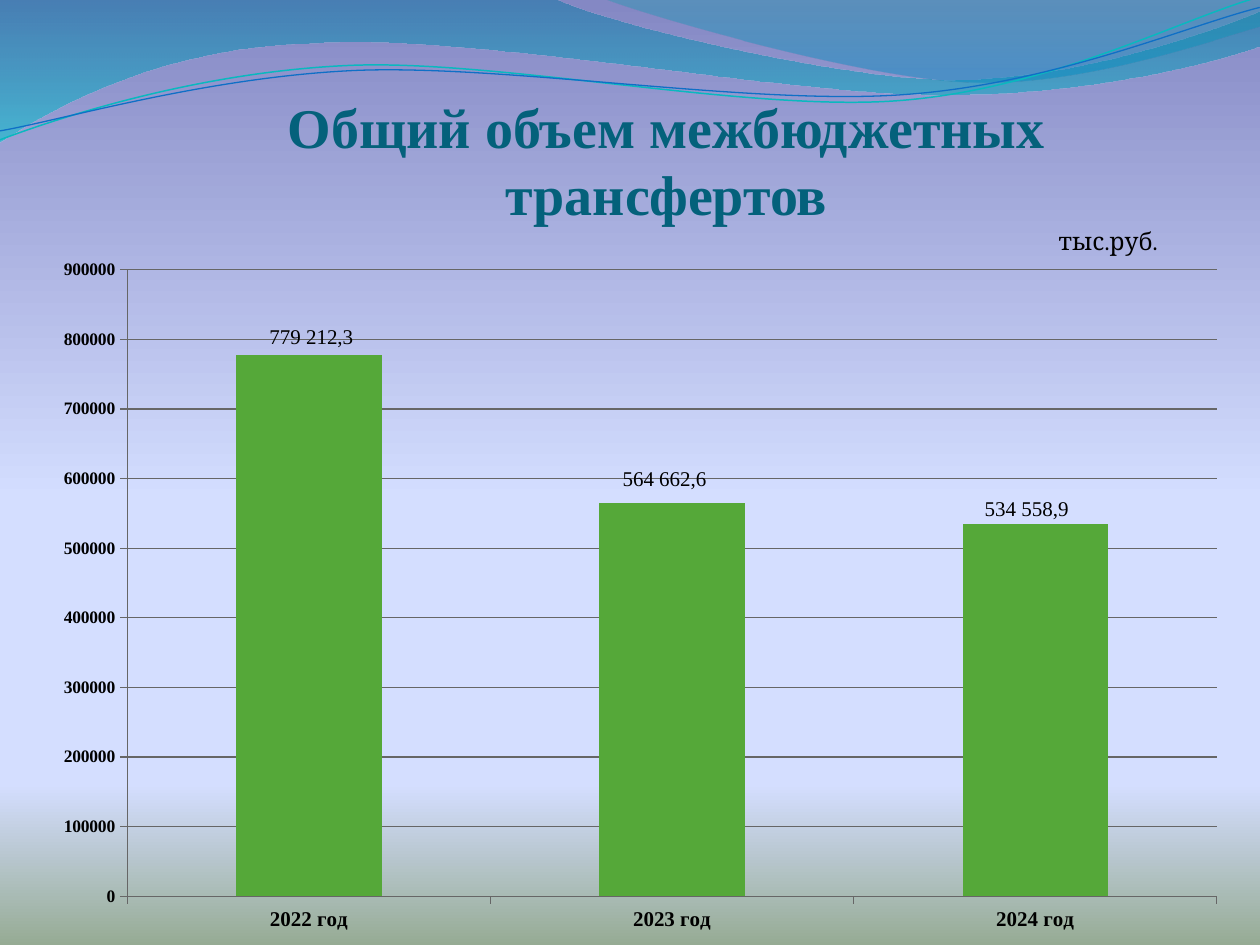
import math

from lxml import etree
from pptx import Presentation
from pptx import util as u
from pptx.chart.data import CategoryChartData
from pptx.dml.color import RGBColor
from pptx.enum import chart as charts, text
from pptx.oxml import parse_xml
from pptx.oxml.ns import nsdecls, qn

COLOURS = {
    "title": "04617B", "text": "000000", "bar": "55A839", "grid": "666666",
    "teal_line": "0AB8BF", "blue_line": "0F6FC6",
}
SERIF = "Times New Roman"

# Gradient stops: position, colour, opacity (positions and opacity in percent)
BACKGROUND = [(0, "8488C4", 100), (53, "D4DEFF", 100),
              (83, "D4DEFF", 100), (100, "96AB94", 100)]
LEFT_WAVE = [(0, "0074A1", 45), (100, "00C6CF", 55)]
RIGHT_WAVE = [(0, "00A1A9", 30), (80, "008BBF", 45)]

# Outlines in cm: two numbers are a straight line, six a Bezier curve
LEFT_WAVE_PATH = [
    (0, 0), (11.18, -0.03), (12.09, 0.43, 16.87, 1.6, 19.25, 1.6),
    (21.67, 1.6, 24.33, 0.66, 25.4, 0.23), (25.43, 0.91),
    (24.97, 1.12, 22.1, 1.93, 18.95, 1.91),
    (15.8, 1.91, 9.7, 0.71, 6.53, 0.86),
    (3.28, 0.91, 1.17, 2.11, -0.03, 2.87)]
RIGHT_WAVE_PATH = [
    (12.17, -0.03), (12.93, 0.28, 17.32, 1.57, 19.53, 1.65),
    (21.74, 1.75, 24.41, 0.81, 25.4, 0.53), (25.4, 0)]
TEAL_LINE_PATH = [
    (0, 2.82), (1.22, 2.36, 4.01, 1.45, 7.04, 1.32),
    (10.03, 1.19, 15.06, 2.26, 18.11, 2.03),
    (21.16, 1.8, 23.83, 0.38, 25.35, -0.05)]
BLUE_LINE_PATH = [
    (0, 2.64), (1.19, 2.44, 4.17, 1.55, 7.19, 1.42),
    (10.24, 1.3, 15.16, 2.13, 18.21, 1.91),
    (21.23, 1.7, 23.9, 0.53, 25.4, 0.15)]
LINE_TILT = -2.7

YEARS = ["2022 год", "2023 год", "2024 год"]
VALUES = [778212, 564663, 534559]
# Label text and its shift in cm
LABELS = [("779 212,3", 0.05, -0.02), ("564 662,6", -0.15, -0.16),
          ("534 558,9", -0.17, 0.02)]


def colour(name):
    return RGBColor.from_string(COLOURS[name])


def set_gradient(fill, parent, stops):
    """Fill from top to bottom."""
    marks = "".join(
        f'<a:gs pos="{position * 1000}"><a:srgbClr val="{value}">'
        f'<a:alpha val="{opacity * 1000}"/></a:srgbClr></a:gs>'
        for position, value, opacity in stops)
    fill.solid()
    solid = parent.find(".//" + qn("a:solidFill"))
    solid.getparent().replace(solid, parse_xml(
        f'<a:gradFill {nsdecls("a")} rotWithShape="1"><a:gsLst>{marks}'
        '</a:gsLst><a:lin ang="5400000" scaled="0"/></a:gradFill>'))


def rotate(point, centre, degrees):
    angle = math.radians(degrees)
    x, y = point[0] - centre[0], point[1] - centre[1]
    return (centre[0] + x * math.cos(angle) - y * math.sin(angle),
            centre[1] + x * math.sin(angle) + y * math.cos(angle))


def add_outline(slide, path_steps, close, tilt=0):
    points = [pair for step in path_steps for pair in zip(step[::2], step[1::2])]
    centre = [(points[0][axis] + points[-1][axis]) / 2 for axis in (0, 1)]
    points = [tuple(map(u.Cm, rotate(point, centre, -tilt))) for point in points]
    builder = slide.shapes.build_freeform(*points[0])
    builder.add_line_segments(points[1:], close=close)
    shape = builder.convert_to_shape()
    shape.rotation = tilt
    shape.shadow.inherit = False

    # Join three segments into one curve wherever the step is a Bezier
    segments = iter(list(shape.element.iter(qn("a:lnTo"))))
    for step in path_steps[1:]:
        first = next(segments)
        if len(step) == 6:
            first.tag = qn("a:cubicBezTo")
            for _ in range(2):
                extra = next(segments)
                first.append(extra[0])
                extra.getparent().remove(extra)
    return shape


def add_wave(slide, path_steps, stops):
    shape = add_outline(slide, path_steps, True)
    shape.line.fill.background()
    set_gradient(shape.fill, shape.element.spPr, stops)


def add_curve(slide, path_steps, name, width):
    shape = add_outline(slide, path_steps, False, LINE_TILT)
    shape.fill.background()
    shape.line.color.rgb = colour(name)
    shape.line.width = u.Pt(width)


def set_font(font, size, bold=False, name=SERIF, shade="text"):
    font.name, font.size, font.bold = name, u.Pt(size), bold
    font.color.rgb = colour(shade)


def add_text(slide, box, words, anchor, margins, **font):
    shape = slide.shapes.add_textbox(*map(u.Cm, box))
    frame = shape.text_frame
    frame.word_wrap = True
    frame.vertical_anchor = anchor
    (frame.margin_left, frame.margin_top,
     frame.margin_right, frame.margin_bottom) = map(u.Cm, margins)
    frame.text = words
    paragraph = frame.paragraphs[0]
    paragraph.alignment = text.PP_ALIGN.CENTER
    set_font(paragraph.runs[0].font, **font)


def manual_layout(**settings):
    layout = parse_xml(f'<c:layout {nsdecls("c")}><c:manualLayout/></c:layout>')
    for key, value in settings.items():
        etree.SubElement(layout[0], qn("c:" + key)).set("val", str(value))
    return layout


def style_axis(axis, size):
    set_font(axis.tick_labels.font, size, True)
    axis.major_tick_mark = charts.XL_TICK_MARK.OUTSIDE
    axis.format.line.color.rgb = colour("grid")


def add_column_chart(slide, box):
    width, height = box[2:]
    data = CategoryChartData()
    data.categories = YEARS
    data.add_series("Series 1", VALUES)
    chart = slide.shapes.add_chart(
        charts.XL_CHART_TYPE.COLUMN_CLUSTERED, *map(u.Cm, box), data).chart
    chart.has_legend = chart.has_title = False
    set_font(chart.font, 10, name="Cambria")

    # Axes and grid
    style_axis(chart.category_axis, 12)
    value_axis = chart.value_axis
    style_axis(value_axis, 10)
    value_axis.minimum_scale, value_axis.maximum_scale = 0, 900000
    value_axis.major_unit = 100000
    value_axis.has_major_gridlines = True
    value_axis.major_gridlines.format.line.color.rgb = colour("grid")

    # Columns and their labels
    plot = chart.plots[0]
    plot.gap_width, plot.vary_by_categories = 150, False
    series = plot.series[0]
    series.format.fill.solid()
    series.format.fill.fore_color.rgb = colour("bar")
    series.data_labels.show_value = True
    set_font(series.data_labels.font, 12, True)
    for index, (words, _, _) in enumerate(LABELS):
        label = series.points[index].data_label
        label.text_frame.text = words
        set_font(label.text_frame.paragraphs[0].runs[0].font, 12)
        label.position = charts.XL_LABEL_POSITION.OUTSIDE_END
    marks = list(chart.element.iter(qn("c:dLbl")))
    for mark, (_, x, y) in zip(marks, LABELS):
        mark.insert(1, manual_layout(x=x / width, y=y / height))

    # Fixed plot area
    plot_area = chart.element.find(".//" + qn("c:plotArea"))
    for old in plot_area.findall(qn("c:layout")):
        plot_area.remove(old)
    plot_area.insert(0, manual_layout(
        layoutTarget="inner", xMode="edge", yMode="edge",
        x=1.78 / width, y=0.49 / height, w=21.96 / width, h=12.63 / height))


def main():
    presentation = Presentation()
    presentation.slide_width, presentation.slide_height = u.Cm(25.4), u.Cm(19.05)
    slide = presentation.slides.add_slide(presentation.slide_layouts[6])

    # Background and waves
    set_gradient(slide.background.fill, slide.element.cSld, BACKGROUND)
    add_wave(slide, LEFT_WAVE_PATH, LEFT_WAVE)
    add_wave(slide, RIGHT_WAVE_PATH, RIGHT_WAVE)
    add_curve(slide, TEAL_LINE_PATH, "teal_line", 0.85)
    add_curve(slide, BLUE_LINE_PATH, "blue_line", 0.75)

    # Title, unit and chart
    add_text(slide, (2.59, 1.4, 21.69, 3.17), "Общий объем межбюджетных трансфертов",
             text.MSO_ANCHOR.BOTTOM, (0, 0.13, 0, 0), size=32, bold=True, shade="title")
    add_text(slide, (20.65, 4.57, 3.38, 0.58), "тыс.руб.",
             text.MSO_ANCHOR.MIDDLE, (0.25, 0.13, 0.25, 0.13), size=14, name="Cambria")
    add_column_chart(slide, (0.79, 4.95, 24.21, 14.1))

    presentation.save("out.pptx")


if __name__ == "__main__":
    main()
